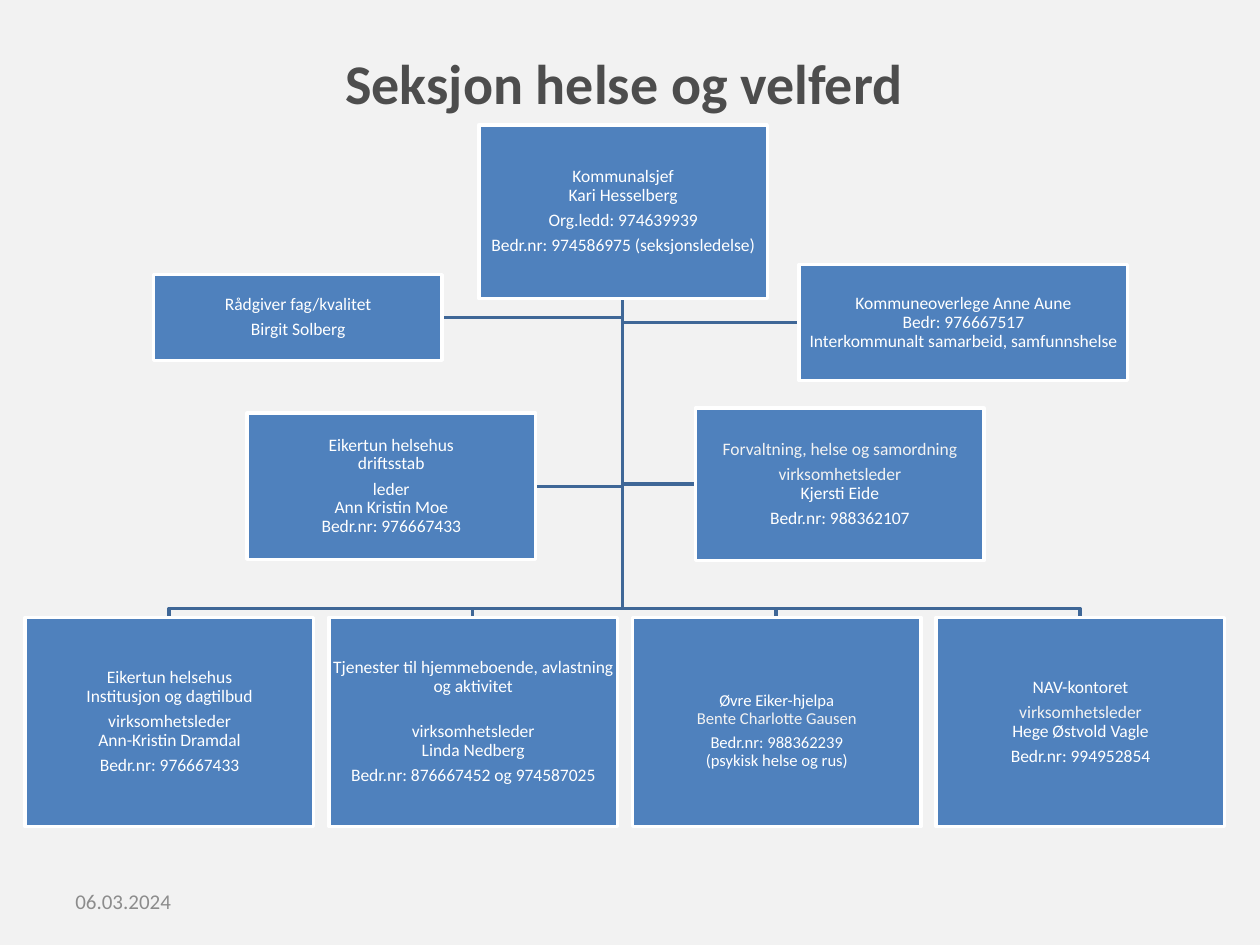
from copy import deepcopy
from dataclasses import dataclass

from pptx import Presentation
from pptx.dml.color import RGBColor as RGB
from pptx.enum.shapes import MSO_SHAPE as Shape
from pptx.enum.text import MSO_ANCHOR as Anchor, PP_ALIGN as Align
from pptx.util import Pt

PX = 9144
FONT = "Calibri"
PAPER = RGB(0xF2, 0xF2, 0xF2)
WHITE = RGB(0xFF, 0xFF, 0xFF)
BLUE = RGB(0x4F, 0x81, 0xBD)
NAVY = RGB(0x3F, 0x67, 0x97)
DARK = RGB(0x4D, 0x4D, 0x4D)
GREY = RGB(0x8C, 0x8C, 0x8C)
BUS = 483
LEAD = "virksomhetsleder"


@dataclass(frozen=True)
class Unit:
    x: int
    y: int
    w: int
    h: int
    paras: tuple[str, ...]
    pale: tuple[str, ...] = ()
    size: float = 10
    gap: float = 3.5
    inset: int = 1

    @property
    def mid(self) -> tuple[int, int]:
        return self.x + self.w // 2, self.y + self.h // 2


def leaf(col: int, *paras: str, **more) -> Unit:
    return Unit(20 + 241 * col, 490, 229, 166, paras, **more)


BOSS = Unit(380, 99, 229, 138, (
    "Kommunalsjef\nKari Hesselberg",
    "Org.ledd: 974639939",
    "Bedr.nr: 974586975 (seksjonsledelse)"))
STAFF = (
    Unit(634, 210, 261, 92, (
        "Kommuneoverlege Anne Aune\nBedr: 976667517\n"
        "Interkommunalt samarbeid, samfunnshelse",)),
    Unit(122, 218, 229, 68, ("Rådgiver fag/kvalitet", "Birgit Solberg")),
    Unit(552, 324, 229, 121, (
        "Forvaltning, helse og samordning",
        f"{LEAD}\nKjersti Eide",
        "Bedr.nr: 988362107"),
        pale=("Forvaltning, helse og samordning", LEAD)),
    Unit(196, 328, 229, 116, (
        "Eikertun helsehus\ndriftsstab",
        "leder\nAnn Kristin Moe\nBedr.nr: 976667433")),
)
LEAVES = (
    leaf(0, "Eikertun helsehus\nInstitusjon og dagtilbud",
         f"{LEAD}\nAnn-Kristin Dramdal", "Bedr.nr: 976667433"),
    leaf(1, "Tjenester til hjemmeboende, avlastning og aktivitet",
         f"{LEAD}\nLinda Nedberg",
         "Bedr.nr: 876667452 og 974587025", gap=14.5),
    leaf(2, "Øvre Eiker-hjelpa\nBente Charlotte Gausen",
         "Bedr.nr: 988362239\n(psykisk helse og rus)",
         pale=("Bente Charlotte Gausen",), size=9.5, inset=16),
    leaf(3, "NAV-kontoret", f"{LEAD}\nHege Østvold Vagle",
         "Bedr.nr: 994952854", pale=(LEAD,)),
)


def add_run(para, text: str, size: float, color: RGB, bold: bool = False):
    run = para.add_run()
    run.text = text
    font = run.font
    font.name, font.size, font.bold = FONT, Pt(size), bold
    font.color.rgb = color
    return run


def add_unit(shapes, unit: Unit) -> None:
    box = shapes.add_shape(
        Shape.RECTANGLE, *(n * PX for n in (unit.x, unit.y, unit.w, unit.h)))
    box.shadow.inherit = False
    box.fill.solid()
    box.fill.fore_color.rgb = BLUE
    box.line.color.rgb = WHITE
    box.line.width = Pt(2)
    frame = box.text_frame
    frame.word_wrap = True
    frame.vertical_anchor = Anchor.MIDDLE
    frame.margin_left = frame.margin_right = frame.margin_bottom = PX
    frame.margin_top = unit.inset * PX
    for i, text in enumerate(unit.paras):
        para = frame.add_paragraph() if i else frame.paragraphs[0]
        para.alignment = Align.CENTER
        para.line_spacing = 0.9
        para.space_after = Pt(3.5 if i else unit.gap)
        for j, line in enumerate(text.split("\n")):
            if j:
                para.add_line_break()
                para._p[-1].append(deepcopy(run._r.get_or_add_rPr()))
            tone = PAPER if line in unit.pale else WHITE
            run = add_run(para, line, unit.size, tone)


def add_branch(shapes, *ends: tuple[int, int]) -> None:
    start = (BOSS.mid[0], BOSS.y + BOSS.h)
    path = shapes.build_freeform(*start, scale=PX)
    path.add_line_segments(ends, close=False)
    line = path.convert_to_shape()
    line.shadow.inherit = False
    line.fill.background()
    line.line.color.rgb = NAVY
    line.line.width = Pt(2)


def add_label(shapes, area: tuple[int, int, int, int], text: str,
              size: int, color: RGB, align: Align, bold: bool) -> None:
    frame = shapes.add_textbox(*(n * PX for n in area)).text_frame
    frame.word_wrap = True
    frame.vertical_anchor = Anchor.MIDDLE
    para = frame.paragraphs[0]
    para.alignment = align
    add_run(para, text, size, color, bold)


def main() -> None:
    deck = Presentation()
    deck.slide_width, deck.slide_height = 1000 * PX, 750 * PX
    slide = deck.slides.add_slide(deck.slide_layouts[6])
    slide.background.fill.solid()
    slide.background.fill.fore_color.rgb = PAPER
    shapes = slide.shapes
    add_label(shapes, (51, 4, 899, 123), "Seksjon helse og velferd ",
              32, DARK, Align.CENTER, True)
    trunk = BOSS.mid[0]
    for unit in STAFF:
        y = unit.mid[1]
        side = unit.x if unit.x > trunk else unit.x + unit.w
        add_branch(shapes, (trunk, y), (side, y))
    for unit in LEAVES:
        x = unit.mid[0]
        add_branch(shapes, (trunk, BUS), (x, BUS), (x, unit.y))
    for unit in (BOSS, *LEAVES, *STAFF):
        add_unit(shapes, unit)
    add_label(shapes, (50, 695, 233, 40), "06.03.2024",
              12, GREY, Align.LEFT, False)
    deck.save("out.pptx")


if __name__ == "__main__":
    main()
